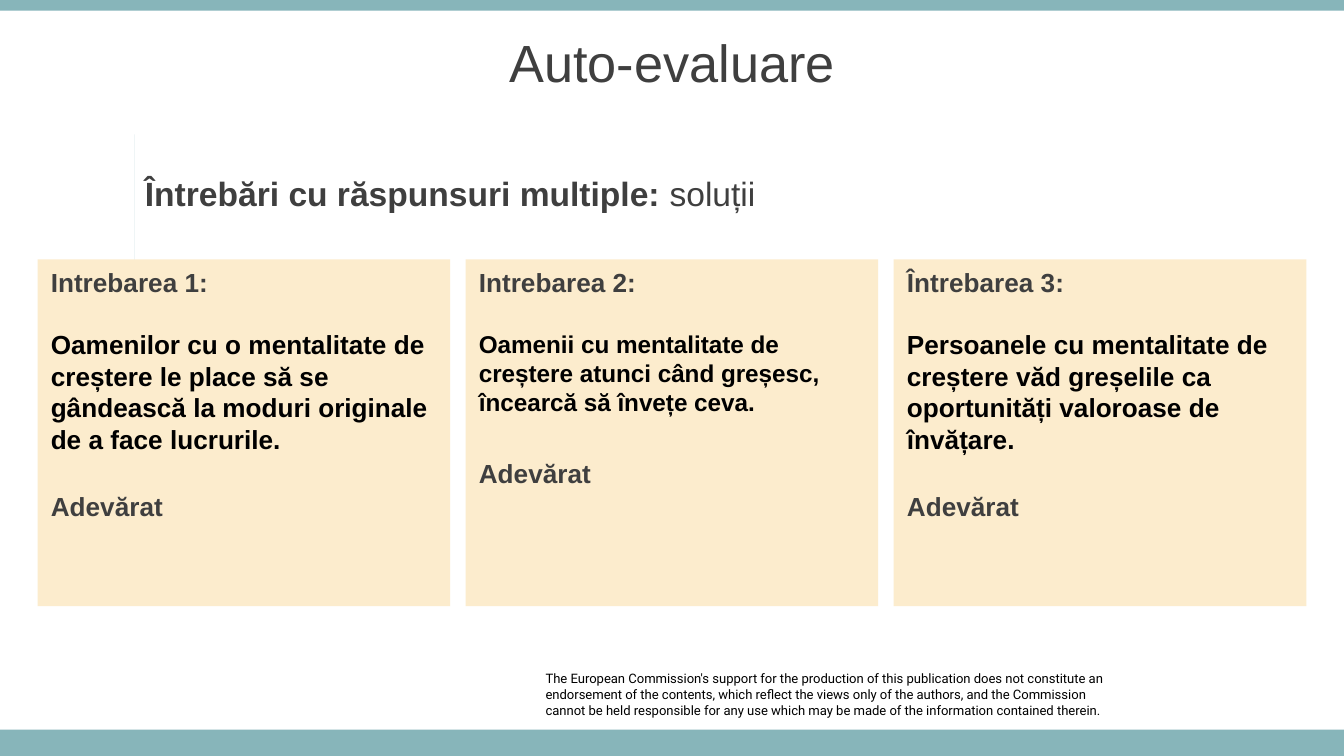
import math

import pptx
import pptx.enum.text
import pptx.util
from pptx.dml.color import RGBColor
from pptx.enum.shapes import MSO_SHAPE
from pptx.enum.text import MSO_ANCHOR, PP_ALIGN
from pptx.util import Inches

TEAL = RGBColor(0x87, 0xB5, 0xBA)
CREAM = RGBColor(0xFC, 0xEC, 0xCD)
GREY = RGBColor(0x3F, 0x3F, 0x3F)
BLACK = RGBColor(0, 0, 0)
WHITE = RGBColor(0xFF, 0xFF, 0xFF)


class SlideBuilder:
    """Holds the style and the current slide."""

    font_name = "Arial"

    def __init__(self, slide):
        self.slide = slide
        background = slide.background.fill
        background.solid()
        background.fore_color.rgb = WHITE

    def paint(self, shape, color):
        shape.shadow.inherit = False
        shape.fill.solid()
        shape.fill.fore_color.rgb = color
        shape.line.fill.background()

    def rectangle(self, left, top, width, height, color):
        shape = self.slide.shapes.add_shape(
            MSO_SHAPE.RECTANGLE, Inches(left), Inches(top), Inches(width), Inches(height))
        self.paint(shape, color)
        return shape

    def outline(self, points, color):
        builder = self.slide.shapes.build_freeform(*points[0], scale=Inches(1))
        builder.add_line_segments(points[1:], close=True)
        self.paint(builder.convert_to_shape(), color)

    def text_box(self, left, top, width, height, anchor=MSO_ANCHOR.MIDDLE, inset=True):
        box = self.slide.shapes.add_textbox(
            Inches(left), Inches(top), Inches(width), Inches(height))
        frame = box.text_frame
        frame.word_wrap = True
        frame.vertical_anchor = anchor
        if not inset:
            frame.margin_left = frame.margin_right = 0
            frame.margin_top = frame.margin_bottom = 0
        return frame

    def paragraph(self, frame, runs, size, color, bold=False, font_name=None,
                  align=PP_ALIGN.LEFT, space_before=0):
        paragraph = frame.paragraphs[0]
        if paragraph.runs:
            paragraph = frame.add_paragraph()
        paragraph.alignment = align
        if space_before:
            paragraph.space_before = pptx.util.Pt(space_before)
        for text in runs:
            paragraph.add_run().text = text
        font = paragraph.font
        font.name = font_name or self.font_name
        font.size = pptx.util.Pt(size)
        font.bold = bold
        font.color.rgb = color
        return paragraph

    def card(self, left, heading, statement, statement_size, answer, answer_gap):
        shape = self.rectangle(left, 1.93, 3.07, 2.58, CREAM)
        frame = shape.text_frame
        frame.word_wrap = True
        frame.vertical_anchor = MSO_ANCHOR.TOP
        self.paragraph(frame, [heading], 14, GREY, bold=True)
        self.paragraph(frame, [statement], statement_size, BLACK, bold=True, space_before=16.8)
        self.paragraph(frame, [answer], 14, GREY, bold=True, space_before=answer_gap)


def signpost_points(center=0.795, post=0.025, cap_y=1.135):
    """Right half from the rounded cap down, then the left half back up."""
    cap = [(center + post * math.cos(math.radians(angle)),
            cap_y - post * math.sin(math.radians(angle))) for angle in range(180, -1, -15)]
    right, left = center + post, center - post
    return cap + [
        (right, 1.17), (0.95, 1.17), (0.98, 1.21), (0.95, 1.25), (right, 1.25),
        (right, 1.27), (0.95, 1.27), (0.95, 1.35), (right, 1.35), (right, 1.59),
        (left, 1.59), (left, 1.35), (0.65, 1.35), (0.61, 1.31), (0.65, 1.27),
        (left, 1.27), (left, 1.25), (0.64, 1.25), (0.64, 1.17), (left, 1.17)]


def main():
    presentation = pptx.Presentation()
    presentation.slide_width = Inches(10)
    presentation.slide_height = Inches(5.625)
    builder = SlideBuilder(presentation.slides.add_slide(presentation.slide_layouts[6]))

    # Disclaimer and coloured bands
    disclaimer = builder.text_box(4.06, 4.99, 4.17, 0.35, MSO_ANCHOR.TOP, inset=False)
    for text in (
        "The European Commission's support for the production of this publication does not "
        "constitute an endorsement of the contents, which reflect the views only of the "
        "authors, and the Commission",
        "cannot be held responsible for any use which may be made of the information "
        "contained therein.",
    ):
        builder.paragraph(disclaimer, [text], 7, BLACK, font_name="Roboto")
    builder.rectangle(0, 5.43, 10, 0.2, TEAL)
    builder.rectangle(0, 0, 10, 0.08, TEAL)

    # Title and subtitle
    title = builder.text_box(0, 0.14, 10, 0.63)
    builder.paragraph(title, ["Auto-evaluare"], 28, GREY, align=PP_ALIGN.CENTER)
    subtitle = builder.text_box(0.98, 1.28, 6.69, 0.31)
    paragraph = builder.paragraph(
        subtitle, ["Întrebări cu răspunsuri multiple: ", "soluții"], 18, GREY)
    paragraph.runs[0].font.bold = True

    # Signpost icon
    builder.outline(signpost_points(), TEAL)

    # Question cards
    questions = [
        ("Intrebarea 1:", "Oamenilor cu o mentalitate de creștere le place să se gândească "
         "la moduri originale de a face lucrurile.", 14, 19.6),
        ("Intrebarea 2:", "Oamenii cu mentalitate de creștere atunci când greșesc, "
         "încearcă să învețe ceva.", 13, 22),
        ("Întrebarea 3:", "Persoanele cu mentalitate de creștere văd greșelile ca "
         "oportunități valoroase de învățare.", 14, 19.6),
    ]
    for index, (heading, statement, size, gap) in enumerate(questions):
        builder.card(0.28 + index * 3.185, heading, statement, size, "Adevărat", gap)

    presentation.save("out.pptx")


if __name__ == "__main__":
    main()
